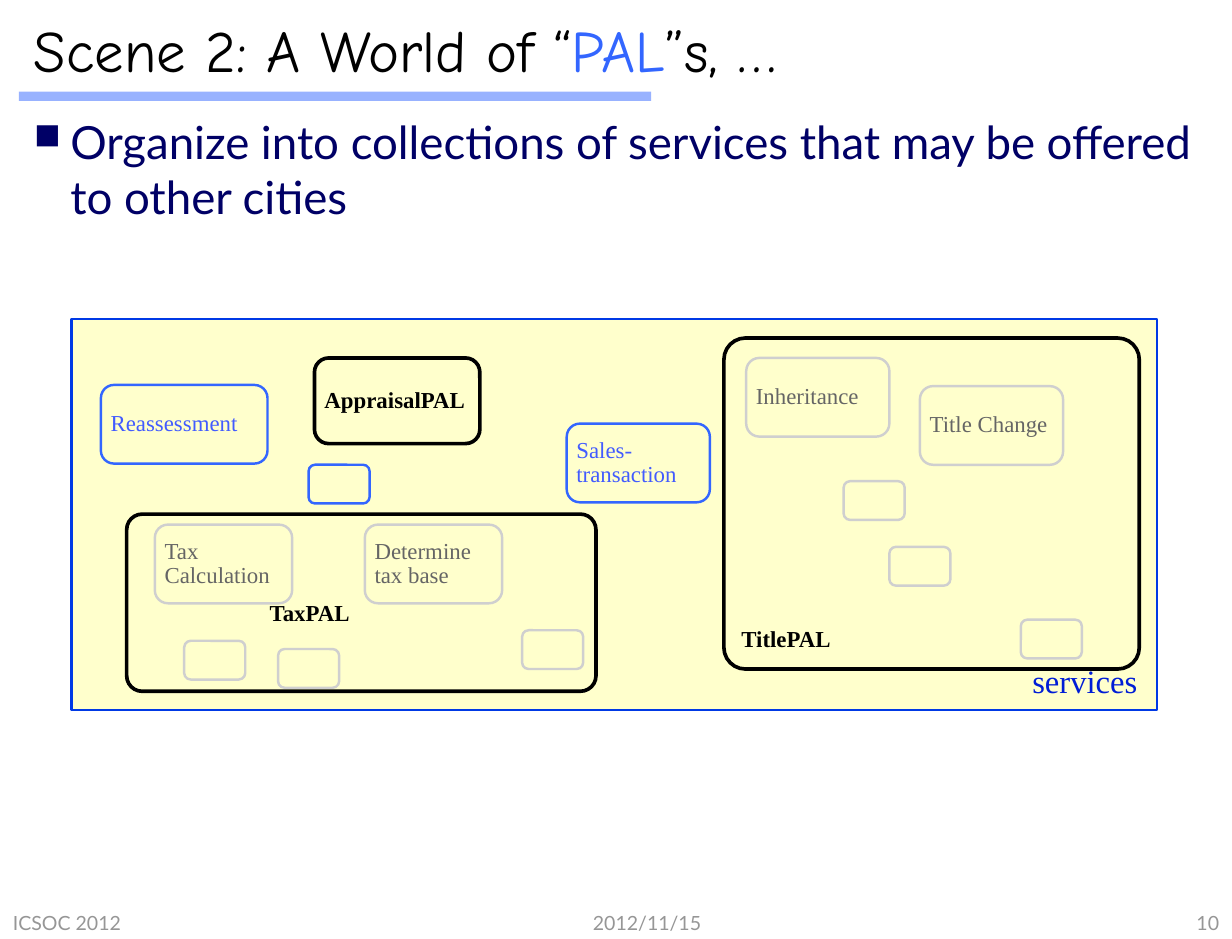
"""Build the "A World of PALs" slide with its map of grouped services."""
import pptx
import pptx.util
from pptx.dml.color import RGBColor
from pptx.enum.shapes import MSO_SHAPE
from pptx.enum.text import MSO_ANCHOR, MSO_AUTO_SIZE, PP_ALIGN
from pptx.oxml.ns import qn
from lxml import etree

PX = 9144
BLACK = RGBColor(0x00, 0x00, 0x00)
NAVY = RGBColor(0x00, 0x00, 0x66)
BLUE = RGBColor(0x33, 0x66, 0xFF)
TEXT_BLUE = RGBColor(0x42, 0x5B, 0xFF)
FRAME_BLUE = RGBColor(0x00, 0x39, 0xE5)
LABEL_BLUE = RGBColor(0x00, 0x1D, 0xD6)
CREAM = RGBColor(0xFF, 0xFF, 0xCC)
SILVER = RGBColor(0xCF, 0xCF, 0xCF)
GRAY = RGBColor(0x65, 0x65, 0x65)
FOOTER_GRAY = RGBColor(0x96, 0x96, 0x96)
SERIF = "Times New Roman"
SANS = "Lato"

SERVICES = [
    ("Tax Calculation", (132, 447, 117, 67), SILVER, GRAY),
    ("Reassessment", (86, 328, 142, 67), BLUE, TEXT_BLUE),
    ("Title Change", (784, 329, 122, 67), SILVER, GRAY),
    ("Inheritance", (636, 305, 122, 67), SILVER, GRAY),
    ("Sales-transaction", (483, 361, 122, 67), BLUE, TEXT_BLUE),
    ("Determine tax base", (311, 447, 117, 67), SILVER, GRAY),
]
UNNAMED = [
    (758, 466, SILVER), (870, 528, SILVER), (719, 410, SILVER),
    (263, 396, BLUE), (157, 546, SILVER), (237, 553, SILVER),
    (445, 537, SILVER),
]
GROUPS = [((108, 438, 400, 151), 0.088), ((617, 288, 354, 282), 0.065)]
LABELS = [
    ("services", (870, 562, 110, 40), 20, LABEL_BLUE, False),
    ("TaxPAL", (220, 508, 89, 31), 14, BLACK, True),
    ("TitlePAL", (622, 530, 97, 31), 14, BLACK, True),
]
FOOTERS = [
    ("ICSOC 2012", (0, 773, 333, 27), PP_ALIGN.LEFT),
    ("2012/11/15", (442, 773, 219, 27), PP_ALIGN.CENTER),
    ("10", (831, 773, 219, 27), PP_ALIGN.RIGHT),
]


def emu(box):
    """Turn px lengths into EMU."""
    return [v * PX for v in box]


def add_box(s, kind, box, fill=None, line=None, width=1.5):
    """Add a preset shape with optional fill and outline."""
    sp = s.shapes.add_shape(kind, *emu(box))
    sp.shadow.inherit = False
    if fill is None:
        sp.fill.background()
    else:
        sp.fill.solid()
        sp.fill.fore_color.rgb = fill
    if line is None:
        sp.line.fill.background()
    else:
        sp.line.color.rgb = line
        sp.line.width = pptx.util.Pt(width)
    return sp


def set_insets(tf, x, y):
    """Set equal side insets and equal top and bottom insets."""
    tf.margin_left = tf.margin_right = x * PX
    tf.margin_top = tf.margin_bottom = y * PX


def write(tf, text, size, font, color, bold=False):
    """Fill the first paragraph and set its font."""
    p = tf.paragraphs[0]
    p.add_run().text = text
    p.font.size = pptx.util.Pt(size)
    p.font.name = font
    p.font.color.rgb = color
    p.font.bold = bold
    return p


def add_text(s, box, text, size, font, color, anchor=MSO_ANCHOR.MIDDLE):
    """Add a wrapping text box and return its paragraph."""
    tf = s.shapes.add_textbox(*emu(box)).text_frame
    tf.word_wrap = True
    tf.vertical_anchor = anchor
    set_insets(tf, 11, 5)
    return write(tf, text, size, font, color)


def add_service(s, text, box, line, color, width=1.5, bold=False):
    """Add a rounded box that names a service."""
    sp = add_box(s, MSO_SHAPE.ROUNDED_RECTANGLE, box, CREAM, line, width)
    tf = sp.text_frame
    tf.word_wrap = True
    tf.vertical_anchor = MSO_ANCHOR.MIDDLE
    set_insets(tf, 5, 6)
    p = write(tf, text, 14, SERIF, color, bold)
    p.alignment = PP_ALIGN.LEFT
    p.line_spacing = 0.9


def add_label(s, text, box, size, color, bold):
    """Add a label that does not wrap."""
    tf = s.shapes.add_textbox(*emu(box)).text_frame
    tf.word_wrap = False
    tf.auto_size = MSO_AUTO_SIZE.SHAPE_TO_FIT_TEXT
    write(tf, text, size, SERIF, color, bold).line_spacing = 0.9


def add_title(s):
    """Add the title, its coloured word and the bar below it."""
    bar = add_box(s, MSO_SHAPE.RECTANGLE, (16, 78, 539, 8), BLUE)
    clr = bar.fill._xPr.find(qn("a:solidFill"))[0]
    etree.SubElement(clr, qn("a:alpha"), val="50000")
    p = add_text(s, (18, 0, 1015, 83), "Scene 2: A World of “", 36,
                 "Comic Neue", BLACK)
    r = p.add_run()
    r.text = "PAL"
    r.font.color.rgb = BLUE
    p.add_run().text = "”s, …"


def add_bullet(s):
    """Add the bulleted statement."""
    p = add_text(s, (18, 92, 1015, 675),
                 "Organize into collections of services that may be offered "
                 "to other cities", 28, SANS, NAVY, MSO_ANCHOR.TOP)
    pPr = p._p.get_or_add_pPr()
    pPr.set("marL", str(31 * PX))
    pPr.set("indent", str(-31 * PX))
    clr = etree.Element(qn("a:buClr"))
    etree.SubElement(clr, qn("a:srgbClr"), val=str(NAVY))
    size = etree.Element(qn("a:buSzPct"), val="80000")
    char = etree.Element(qn("a:buChar"), char="■")
    for i, el in enumerate((clr, size, char)):
        pPr.insert(i, el)


def main():
    """Build and save the slide."""
    prs = pptx.Presentation()
    prs.slide_width, prs.slide_height = emu((1050, 800))
    s = prs.slides.add_slide(prs.slide_layouts[6])
    add_title(s)
    add_bullet(s)
    for text, box, align in FOOTERS:
        add_text(s, box, text, 12, SANS, FOOTER_GRAY).alignment = align
    add_box(s, MSO_SHAPE.RECTANGLE, (61, 272, 925, 333), CREAM, FRAME_BLUE)
    for service in SERVICES:
        add_service(s, *service)
    for x, y, line in UNNAMED:
        add_box(s, MSO_SHAPE.ROUNDED_RECTANGLE, (x, y, 52, 33), CREAM, line)
    add_service(s, "AppraisalPAL", (268, 305, 141, 73), BLACK, BLACK, 2.25, True)
    for box, radius in GROUPS:
        sp = add_box(s, MSO_SHAPE.ROUNDED_RECTANGLE, box, None, BLACK, 2.25)
        sp.adjustments[0] = radius
    for label in LABELS:
        add_label(s, *label)
    prs.save("out.pptx")


if __name__ == "__main__":
    main()
